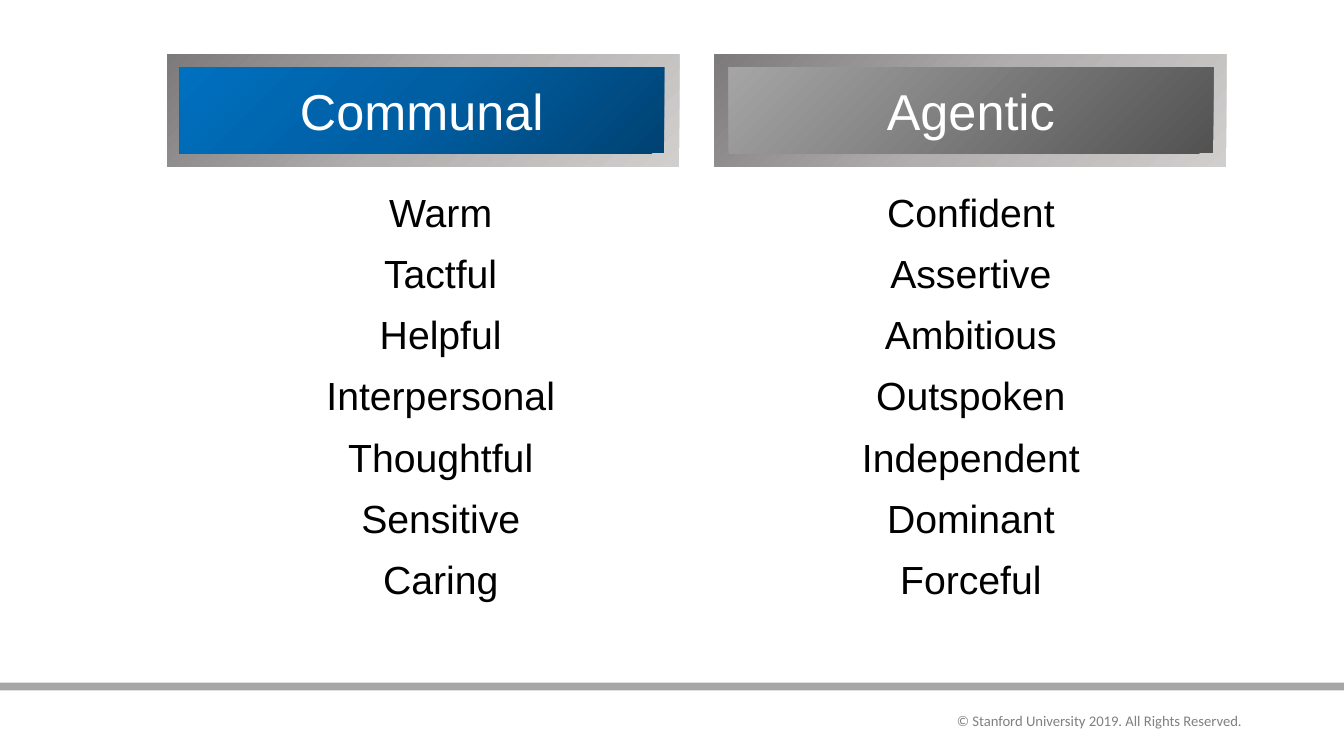
from dataclasses import dataclass

import pptx
import pptx.dml.color
import pptx.enum.shapes
import pptx.enum.text
import pptx.oxml
import pptx.oxml.ns
import pptx.util
from pptx.util import Cm

ALIGN = pptx.enum.text.PP_ALIGN
NO_STYLE_NO_GRID = "{2D5ABB26-0587-4C30-8999-92F81FD0307C}"
DIAGONAL = '<a:lin ang="13500000" scaled="0"/>'
FROM_CORNER = '<a:path path="circle"><a:fillToRect r="100000" b="100000"/></a:path>'
FRAME_STOPS = {0: "7C7A7A", 50: "B0AEAE", 100: "D1CECE"}


@dataclass
class TraitColumn:
    heading: str
    frame_left: float
    plate_left: float
    width: float
    plate_stops: dict[int, str]
    traits: list[str]


COLUMNS = [
    TraitColumn("Communal", 4.22, 4.52, 12.5,
                {0: "004272", 50: "005EA2", 100: "0070C0"},
                ["Warm", "Tactful", "Helpful", "Interpersonal",
                 "Thoughtful", "Sensitive", "Caring"]),
    TraitColumn("Agentic", 18.01, 18.36, 14.22,
                {0: "525252", 100: "A5A5A5"},
                ["Confident", "Assertive", "Ambitious", "Outspoken",
                 "Independent", "Dominant", "Forceful"]),
]


def color(value: str) -> pptx.dml.color.RGBColor:
    return pptx.dml.color.RGBColor.from_string(value)


def add_rectangle(slide, left: float, top: float, width: float, height: float):
    shape = slide.shapes.add_shape(
        pptx.enum.shapes.MSO_SHAPE.RECTANGLE, Cm(left), Cm(top), Cm(width), Cm(height))
    shape.shadow.inherit = False
    shape.line.fill.background()
    return shape


def set_gradient(shape, stops: dict[int, str], direction: str) -> None:
    stop_xml = "".join(
        f'<a:gs pos="{position * 1000}"><a:srgbClr val="{value}"/></a:gs>'
        for position, value in stops.items())
    gradient = pptx.oxml.parse_xml(
        f'<a:gradFill {pptx.oxml.ns.nsdecls("a")} rotWithShape="1">'
        f"<a:gsLst>{stop_xml}</a:gsLst>{direction}</a:gradFill>")
    shape.element.spPr.find(pptx.oxml.ns.qn("a:prstGeom")).addnext(gradient)


def add_text(paragraph, text: str, size: float, value: str,
             align: ALIGN = ALIGN.CENTER, font: str = "Arial") -> None:
    paragraph.alignment = align
    run = paragraph.add_run()
    run.text = text
    run.font.size = pptx.util.Pt(size)
    run.font.name = font
    run.font.color.rgb = color(value)


def add_footer(slide) -> None:
    bar = add_rectangle(slide, 0, 17.2, 33.87, 0.2)
    bar.fill.solid()
    bar.fill.fore_color.rgb = color("A6A6A6")
    box = slide.shapes.add_textbox(Cm(18.75), Cm(17.81), Cm(12.8), Cm(0.74))
    box.text_frame.word_wrap = True
    add_text(box.text_frame.paragraphs[0],
             "© Stanford University 2019. All Rights Reserved.",
             10.5, "808080", ALIGN.RIGHT, "Calibri")


def add_heading(slide, column: TraitColumn) -> None:
    frame = add_rectangle(slide, column.frame_left, 1.37, 12.9, 2.84)
    set_gradient(frame, FRAME_STOPS, FROM_CORNER)
    plate = add_rectangle(slide, column.plate_left, 1.7, 12.22, 2.16)
    set_gradient(plate, column.plate_stops, DIAGONAL)
    plate.text_frame.vertical_anchor = pptx.enum.text.MSO_ANCHOR.MIDDLE
    add_text(plate.text_frame.paragraphs[0], column.heading, 36, "FFFFFF")


def add_trait_table(slide, columns: list[TraitColumn]) -> None:
    graphic_frame = slide.shapes.add_table(
        1, len(columns), Cm(4.22), Cm(4.22),
        Cm(sum(column.width for column in columns)), Cm(13.39))
    table = graphic_frame.table
    table.first_row = table.horz_banding = False
    for style in graphic_frame.element.iter(pptx.oxml.ns.qn("a:tableStyleId")):
        style.text = NO_STYLE_NO_GRID
    for index, column in enumerate(columns):
        table.columns[index].width = Cm(column.width)
        cell = table.cell(0, index)
        cell.fill.background()
        cell.margin_left = cell.margin_right = Cm(0.25)
        cell.margin_top = cell.margin_bottom = Cm(0.18)
        for row, trait in enumerate(column.traits):
            text_frame = cell.text_frame
            paragraph = text_frame.add_paragraph() if row else text_frame.paragraphs[0]
            paragraph.level = 1
            paragraph.line_spacing = 1.4
            properties = paragraph._p.get_or_add_pPr()
            properties.set("marL", str(Cm(1.27)))
            properties.set("indent", "0")
            add_text(paragraph, trait, 28, "000000")


def main() -> None:
    presentation = pptx.Presentation()
    presentation.slide_width = Cm(33.87)
    presentation.slide_height = Cm(19.05)
    slide = presentation.slides.add_slide(presentation.slide_layouts[6])

    # Footer bar and copyright line
    add_footer(slide)

    # Framed headings
    for column in COLUMNS:
        add_heading(slide, column)

    # Traits under the headings
    add_trait_table(slide, COLUMNS)

    presentation.save("out.pptx")


if __name__ == "__main__":
    main()
